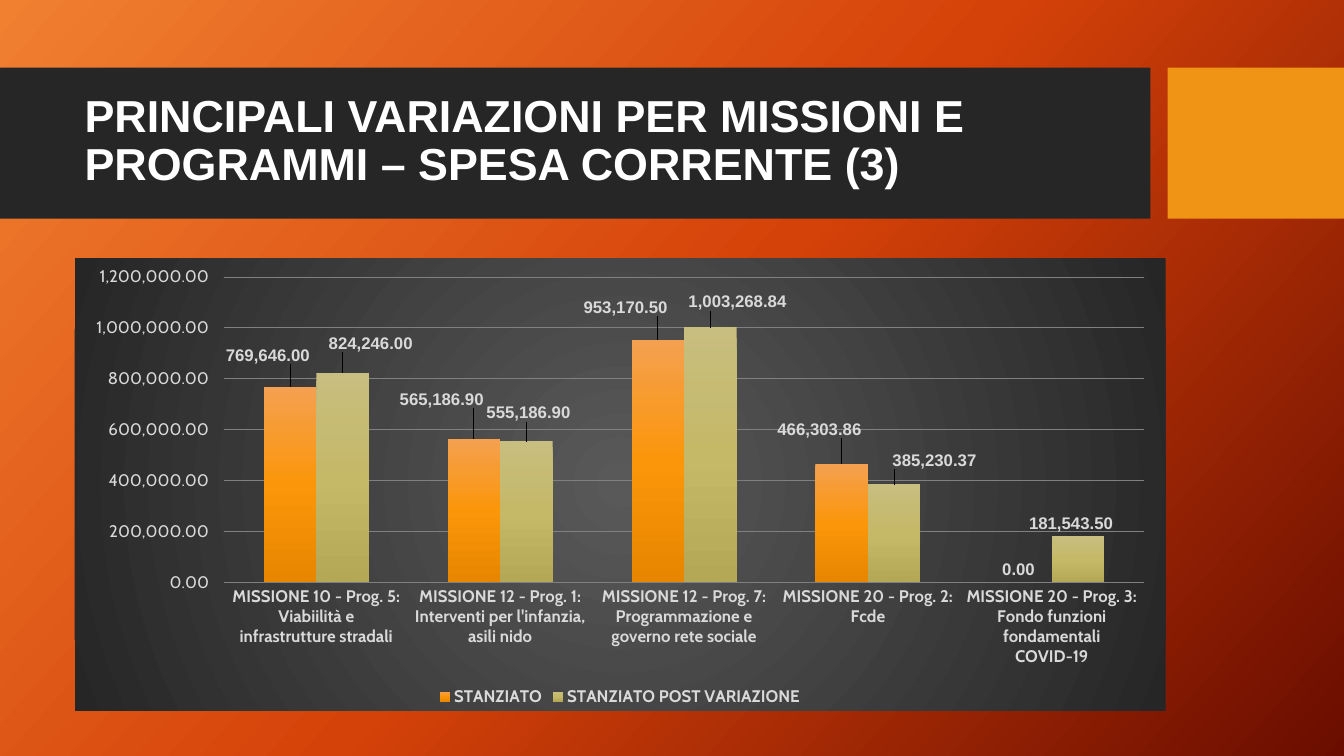
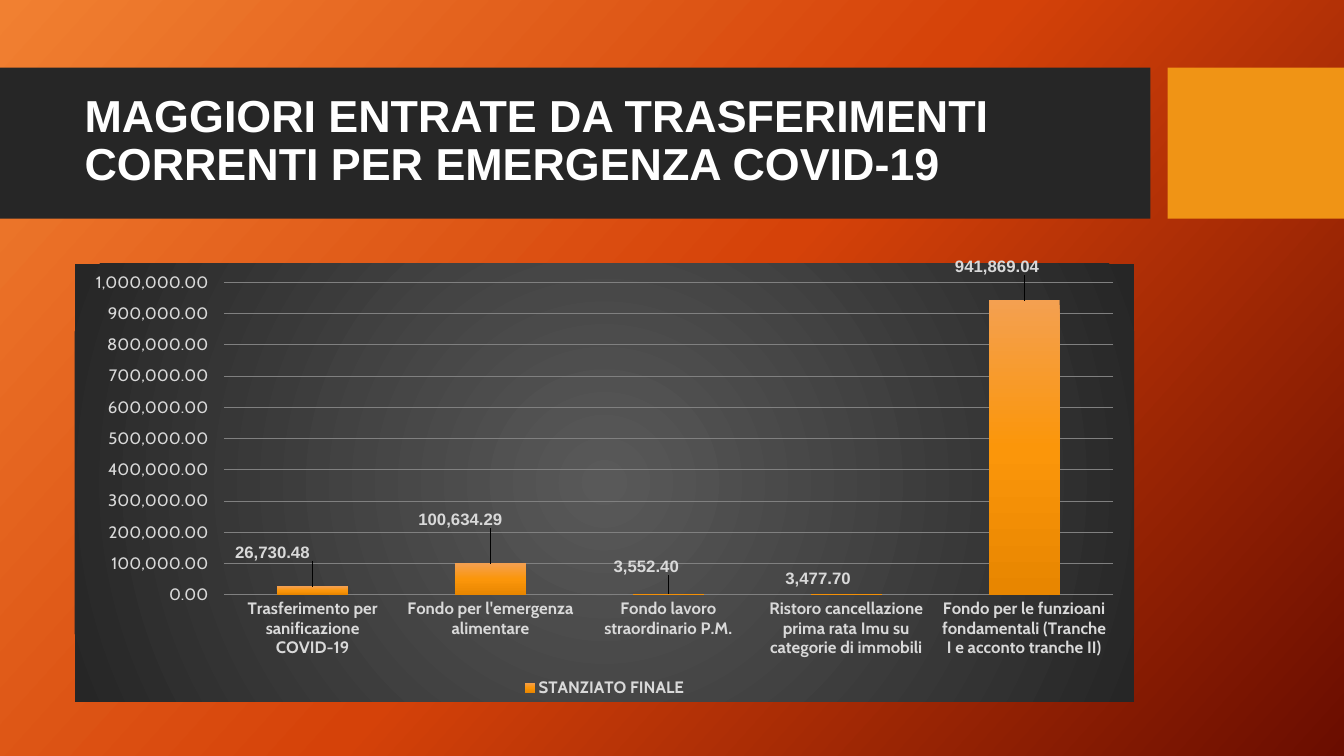
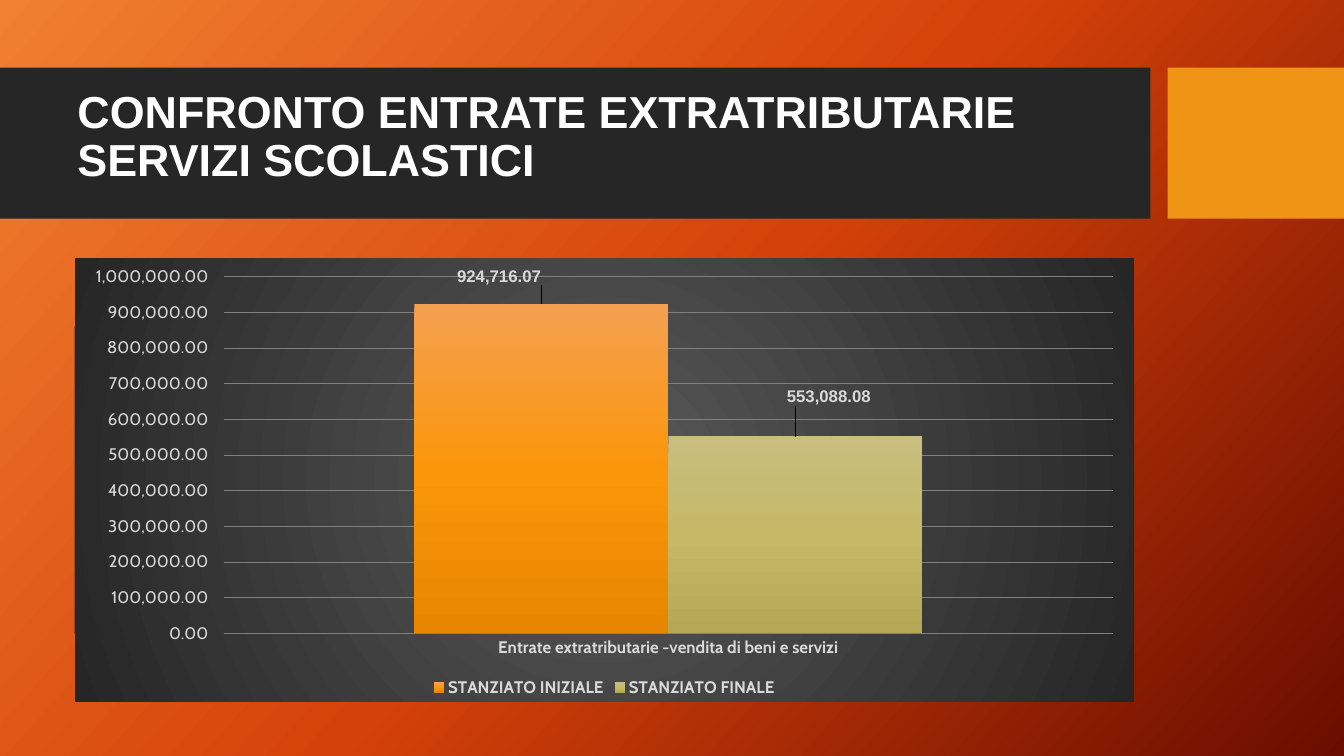
from copy import deepcopy

from pptx import Presentation
from pptx.chart.data import CategoryChartData
from pptx.dml.color import RGBColor
from pptx.enum.chart import XL_CHART_TYPE, XL_LABEL_POSITION, XL_LEGEND_POSITION, XL_TICK_MARK
from pptx.enum.shapes import MSO_SHAPE
from pptx.enum.text import MSO_ANCHOR
from pptx.oxml import parse_xml
from pptx.oxml.ns import nsdecls, qn
from pptx.util import Inches, Pt

COLORS = {"band": "262626", "accent": "F09415", "title": "FFFFFF",
          "chart_text": "FFFFFF", "label": "D9D9D9", "grid": "808080"}
GRADIENTS = {
    "background": ["F18031", "D54209", "6A0D00"],
    "chart": ["595959", "262626"],
    "series": [["F4A050", "FB960A", "E88600"], ["C8BE7F", "C5B867", "B4A756"]],
}
NUMBER_FORMAT = "#,##0.00\\ _€"

# Each series: name, then (value, label shift right, label shift down) in inches.
SLIDES = [
    {
        "title": "PRINCIPALI VARIAZIONI PER MISSIONI E PROGRAMMI – SPESA CORRENTE (3)",
        "title_at": (0.74, 0.82),
        "chart_size": (10.82, 4.49),
        "categories": [
            "MISSIONE 10 - Prog. 5: Viabiilità e infrastrutture stradali",
            "MISSIONE 12 - Prog. 1: Interventi per l'infanzia, asili nido",
            "MISSIONE 12 - Prog. 7: Programmazione e governo rete sociale",
            "MISSIONE 20 - Prog. 2: Fcde",
            "MISSIONE 20 - Prog. 3: Fondo funzioni fondamentali COVID-19",
        ],
        "series": [
            ("STANZIATO", [(769646, -0.15, -0.18), (565186.9, -0.25, -0.26),
                           (953170.5, -0.25, -0.19), (466303.86, -0.15, -0.21), (0, 0, 0)]),
            ("STANZIATO POST VARIAZIONE", [(824246, 0.35, -0.16), (555186.9, 0.09, -0.15),
                                           (1003268.84, 0.34, -0.12), (385230.37, 0.47, -0.11),
                                           (181543.5, 0, 0)]),
        ],
    },
    {
        "title": "MAGGIORI ENTRATE DA TRASFERIMENTI CORRENTI PER EMERGENZA COVID-19",
        "title_at": (0.74, 0.82),
        "chart_size": (10.51, 4.4),
        "categories": [
            "Trasferimento per sanificazione COVID-19",
            "Fondo per l'emergenza alimentare",
            "Fondo lavoro straordinario P.M.",
            "Ristoro cancellazione prima rata Imu su categorie di immobili",
            "Fondo per le funzioani fondamentali (Tranche I e acconto tranche II)",
        ],
        "series": [
            ("STANZIATO FINALE", [(26730.48, -0.33, -0.21), (100634.29, -0.23, -0.31),
                                  (3552.4, -0.15, -0.14), (3477.7, -0.21, -0.02),
                                  (941869.04, -0.2, -0.21)]),
        ],
    },
    {
        "title": "CONFRONTO ENTRATE EXTRATRIBUTARIE SERVIZI SCOLASTICI",
        "title_at": (0.67, 0.78),
        "chart_size": (10.51, 4.4),
        "categories": ["Entrate extratributarie -vendita di beni e servizi"],
        "series": [
            ("STANZIATO INIZIALE", [(924716.07, -0.35, -0.14)]),
            ("STANZIATO FINALE", [(553088.08, 0.4, -0.26)]),
        ],
    },
]


def set_gradient(props, colors, angle=None):
    """Replace the solid fill in props by evenly spaced stops: linear, or circular without an angle."""
    stops = "".join(
        f'<a:gs pos="{100000 * i // (len(colors) - 1)}"><a:srgbClr val="{c}"/></a:gs>'
        for i, c in enumerate(colors))
    if angle is None:
        shade = ('<a:path path="circle">'
                 '<a:fillToRect l="50000" t="50000" r="50000" b="50000"/></a:path>')
    else:
        shade = f'<a:lin ang="{angle * 60000}" scaled="0"/>'
    grad = parse_xml(f'<a:gradFill {nsdecls("a")} rotWithShape="1">'
                     f'<a:gsLst>{stops}</a:gsLst>{shade}</a:gradFill>')
    props.replace(props.find(qn("a:solidFill")), grad)


def style_font(font, size, color, name, bold=False):
    font.size, font.name, font.bold = Pt(size), name, bold
    font.color.rgb = RGBColor.from_string(color)


prs = Presentation()
prs.slide_width, prs.slide_height = Inches(13.33), Inches(7.5)
master = prs.slide_master
master.background.fill.solid()
set_gradient(master._element.find(".//" + qn("p:bgPr")), GRADIENTS["background"], 42)

for content in SLIDES:
    s = prs.slides.add_slide(prs.slide_layouts[6])

    for left, width, color in [(0, 11.41, "band"), (11.58, 1.75, "accent")]:
        sp = s.shapes.add_shape(MSO_SHAPE.RECTANGLE, Inches(left), Inches(0.67),
                                Inches(width), Inches(1.5))
        sp.shadow.inherit = False
        sp.fill.solid()
        sp.fill.fore_color.rgb = RGBColor.from_string(COLORS[color])
        sp.line.fill.background()

    left, top = content["title_at"]
    tf = s.shapes.add_textbox(Inches(left), Inches(top), Inches(10.51), Inches(1.18)).text_frame
    tf.word_wrap = True
    tf.vertical_anchor = MSO_ANCHOR.MIDDLE
    p = tf.paragraphs[0]
    p.line_spacing = 0.9
    r = p.add_run()
    r.text = content["title"]
    style_font(r.font, 32, COLORS["title"], "Arial", True)

    data = CategoryChartData(number_format=NUMBER_FORMAT)
    data.categories = content["categories"]
    for name, points in content["series"]:
        data.add_series(name, [value for value, _, _ in points])
    width, height = content["chart_size"]
    chart = s.shapes.add_chart(XL_CHART_TYPE.COLUMN_CLUSTERED, Inches(0.74), Inches(2.56),
                               Inches(width), Inches(height), data).chart
    chart.has_title = False
    style_font(chart.font, 10, COLORS["chart_text"], "Cabin")
    chart_props = parse_xml(f'<c:spPr {nsdecls("c", "a")}><a:solidFill/>'
                            '<a:ln><a:noFill/></a:ln></c:spPr>')
    set_gradient(chart_props, GRADIENTS["chart"])
    chart._chartSpace.find(qn("c:chart")).addnext(chart_props)

    chart.has_legend = True
    chart.legend.position = XL_LEGEND_POSITION.BOTTOM
    chart.legend.include_in_layout = False
    style_font(chart.legend.font, 12, COLORS["label"], "Cabin", True)

    for axis, bold in [(chart.category_axis, True), (chart.value_axis, False)]:
        axis.major_tick_mark = axis.minor_tick_mark = XL_TICK_MARK.NONE
        axis.format.line.fill.background()
        style_font(axis.tick_labels.font, 12, COLORS["label"], "Cabin", bold)
    values = chart.value_axis
    values.tick_labels.number_format = NUMBER_FORMAT
    values.tick_labels.number_format_is_linked = False
    values.has_major_gridlines = True
    grid = values.major_gridlines.format.line
    grid.width = Pt(0.75)
    grid.color.rgb = RGBColor.from_string(COLORS["grid"])

    plot = chart.plots[0]
    plot.vary_by_categories = False
    plot.gap_width, plot.overlap = 150, 0
    for series, (_, points), colors in zip(plot.series, content["series"], GRADIENTS["series"]):
        series.invert_if_negative = False
        series.format.fill.solid()
        set_gradient(series._element.spPr, colors, 90)

        labels = series.data_labels
        labels.show_value = True
        labels.number_format = NUMBER_FORMAT
        labels.number_format_is_linked = False
        labels.position = XL_LABEL_POSITION.OUTSIDE_END
        style_font(labels.font, 12, COLORS["label"], "Arial", True)

        group = labels._element
        for leader in group.findall(qn("c:showLeaderLines")):
            group.remove(leader)
        shared = list(group)
        for i, (_, right, down) in enumerate(points):
            if not (right or down):
                continue
            label = parse_xml(
                f'<c:dLbl {nsdecls("c")}><c:idx val="{i}"/><c:layout><c:manualLayout>'
                f'<c:x val="{right / width:.4f}"/><c:y val="{down / height:.4f}"/>'
                '</c:manualLayout></c:layout></c:dLbl>')
            label.extend(deepcopy(shared))
            group.insert(i, label)

prs.save("out.pptx")
